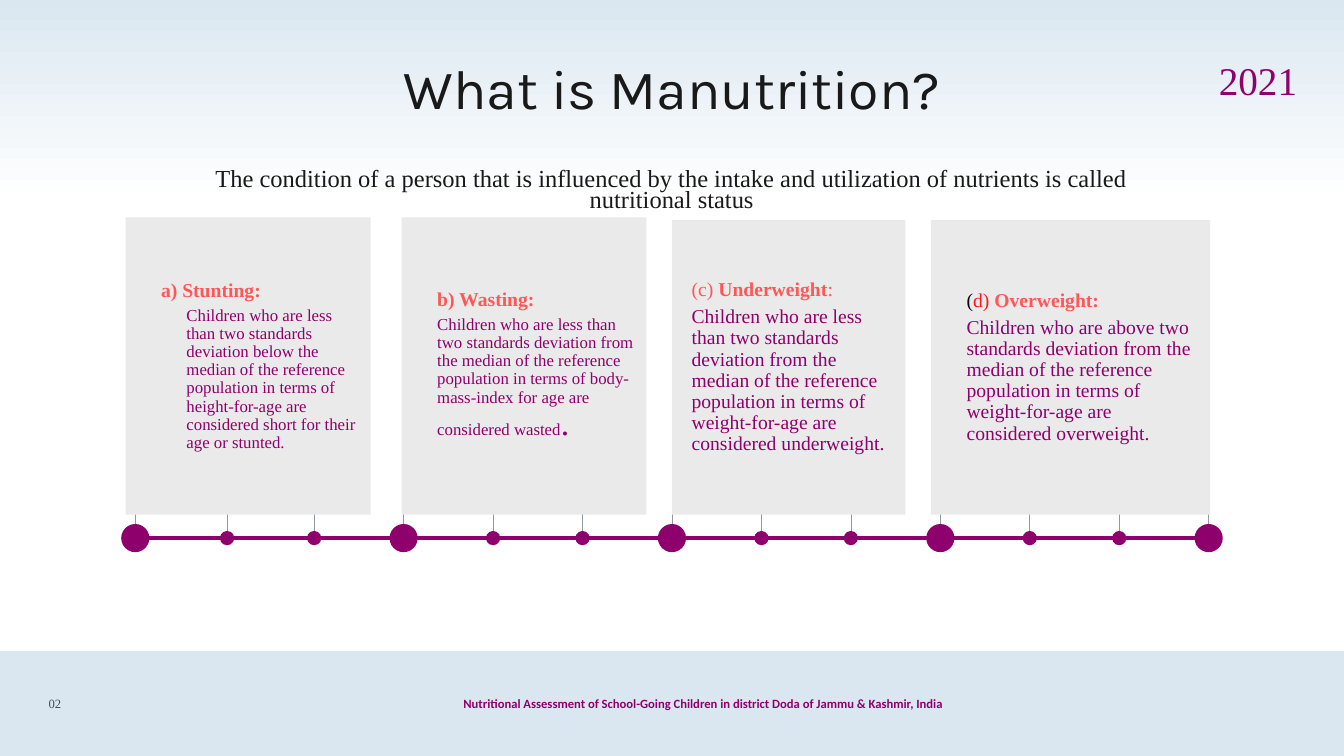
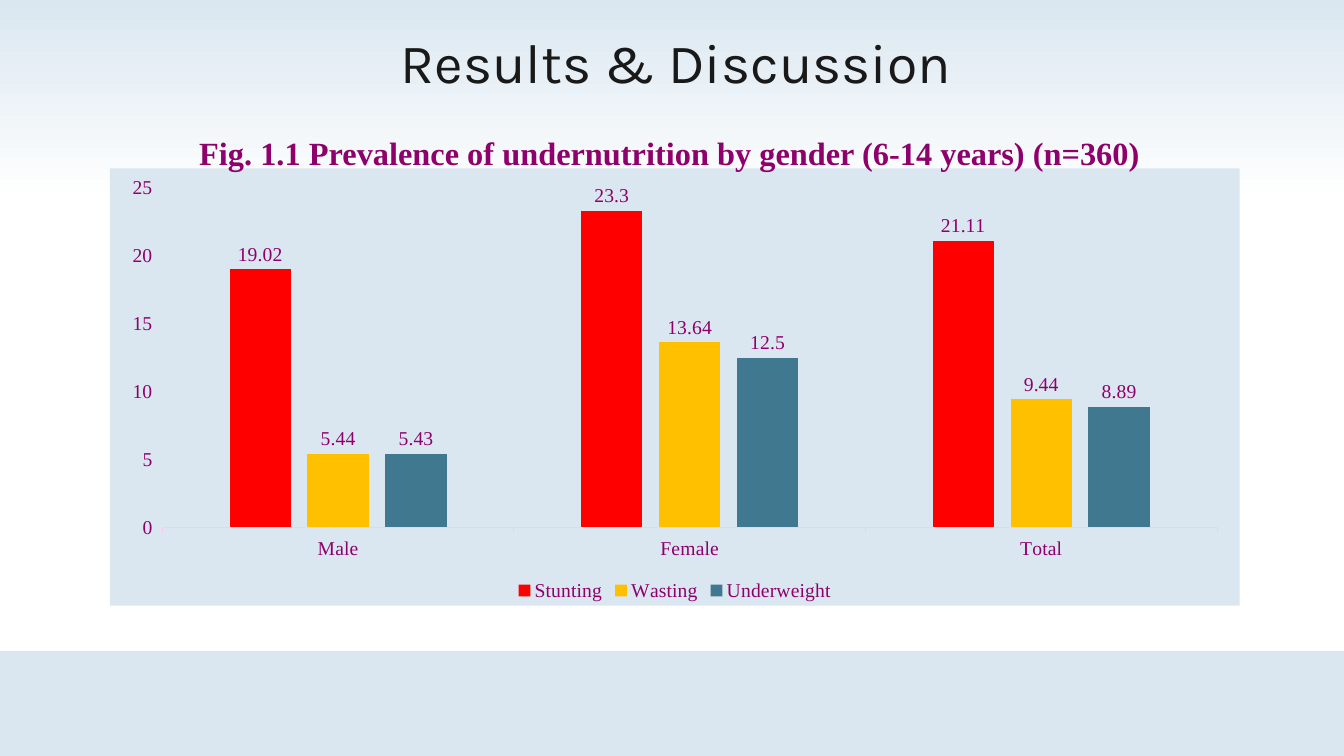
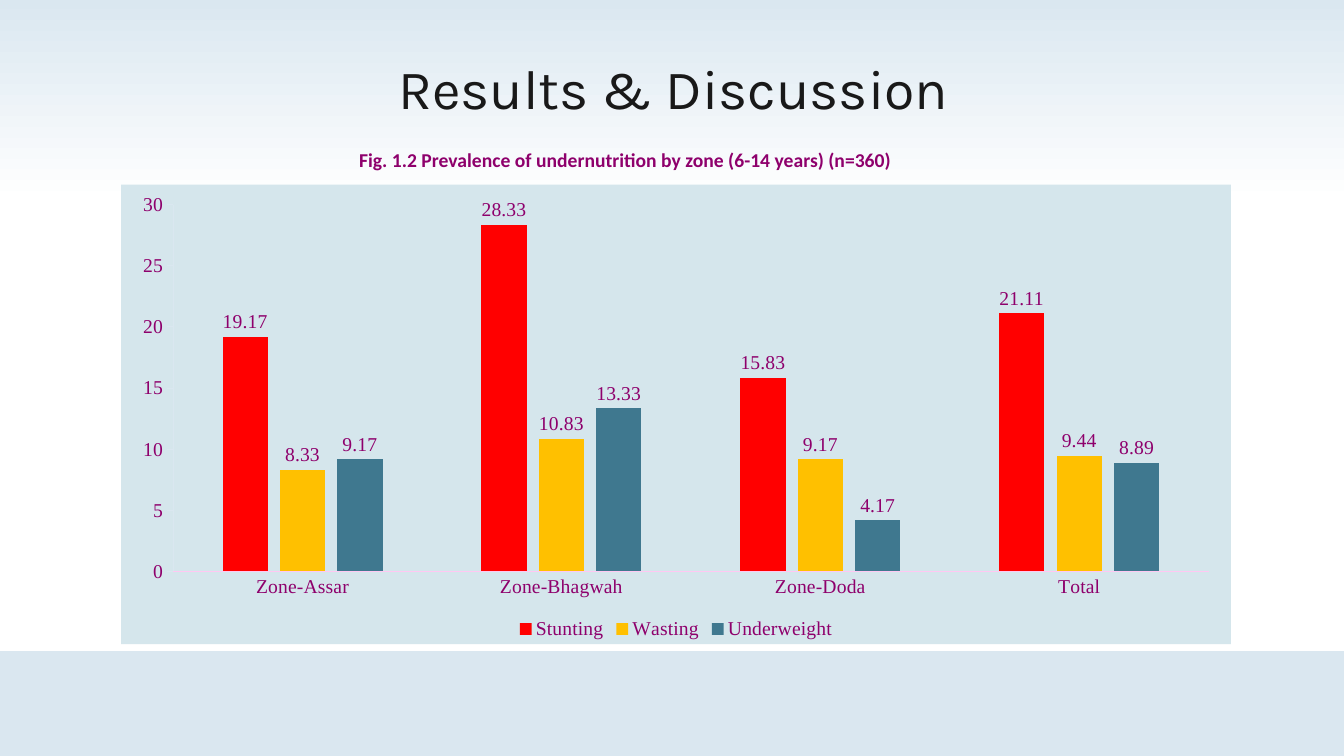
"""Build three slides on child undernutrition: definitions and two result charts."""
from dataclasses import dataclass

from lxml import etree
from pptx import Presentation
from pptx.chart import data as chart_data
from pptx.dml.color import RGBColor
from pptx.enum import chart as chart_enum, shapes, text
from pptx.oxml import ns
from pptx.util import Cm, Pt


@dataclass(frozen=True)
class Theme:
    serif: str = "Times New Roman"
    sans: str = "Calibri"
    display: str = "Karla"
    plum: str = "8E006C"
    coral: str = "FF5757"
    scarlet: str = "FF1616"
    ink: str = "191919"
    black: str = "000000"
    white: str = "FFFFFF"
    slate: str = "454D55"
    grey: str = "9399A1"
    card: str = "EAEAEA"
    mist: str = "DAE7F0"
    pale_teal: str = "D5E6EC"
    pink: str = "FFC8F2"
    bars: tuple = ("FF0000", "FFC000", "3F788F")
    title_size: float = 39.6
    year_size: float = 28
    full_stop_size: float = 24
    caption_size: float = 23.1
    subtitle_size: float = 17.5
    body_size: float = 14
    small_size: float = 12
    footer_size: float = 9


T = Theme()
CENTER, RIGHT = text.PP_ALIGN.CENTER, text.PP_ALIGN.RIGHT
MIDDLE, TOP = text.MSO_ANCHOR.MIDDLE, text.MSO_ANCHOR.TOP
NO_TICK, TICK = chart_enum.XL_TICK_MARK.NONE, chart_enum.XL_TICK_MARK.OUTSIDE
SLIDE_W, SLIDE_H = 33.87, 19.05
TITLE_W, TITLE_H = 25.4, 1.9
CARD_INSETS = (0.5, 0.13, 0.25, 0.13)

SUBTITLE = ("The condition of a person that is influenced by the intake and "
            "utilization of nutrients is called nutritional status")
FOOTER = ("Nutritional Assessment of School-Going Children in district Doda "
          "of Jammu & Kashmir, India")

CARDS = [
    dict(box=(3.17, 5.48, 6.17, 7.49), margin=1.03, hang=-0.64, size=T.small_size,
         heading=[("a) Stunting:", dict(bold=True))],
         body=[("Children who are less than two standards deviation below the median of "
                "the reference population in terms of height-for-age are considered "
                "short for their age or stunted.", {})]),
    dict(box=(10.12, 5.48, 6.17, 7.49), margin=0.4, hang=0, size=T.small_size,
         heading=[("b) Wasting:", dict(bold=True))],
         body=[("Children who are less than two standards deviation from the median of "
                "the reference population in terms of body-mass-index for age are "
                "considered wasted", {}),
               (".", dict(size=T.full_stop_size))]),
    dict(box=(16.93, 5.55, 5.89, 7.42), margin=0, hang=0, size=T.body_size,
         heading=[("(c) ", {}), ("Underweight", dict(bold=True)), (":", {})],
         body=[("Children who are less than two standards deviation from the median of "
                "the reference population in terms of weight-for-age are considered "
                "underweight.", {})]),
    dict(box=(23.46, 5.55, 7.04, 7.42), margin=0.4, hang=0, size=T.body_size,
         heading=[("(", dict(color=T.black)), ("d) ", dict(color=T.scarlet)),
                  ("Overweight:", dict(bold=True))],
         body=[("Children who are above two standards deviation from the median of "
                "the reference population in terms of weight-for-age are considered "
                "overweight.", {})]),
]

TIMELINE = dict(left=3.41, right=30.46, y=13.56, intervals=4, parts=3, nudges={1: 0.06},
                major=dict(dot=0.71, top=9.96), minor=dict(dot=0.36, top=12.34))

RESULTS = [
    dict(title_at=(4.34, 0.76), box=(2.77, 4.24, 28.47, 11.02),
         fill=T.mist, group_tick=TICK, top=25,
         groups=["Male", "Female", "Total"],
         series={"Stunting": (19.02, 23.3, 21.11),
                 "Wasting": (5.44, 13.64, 9.44),
                 "Underweight": (5.43, 12.5, 8.89)},
         caption="Fig. 1.1 Prevalence of undernutrition by gender (6-14 years) (n=360)",
         caption_box=(4.77, 3.23, 25.4, 1.17), anchor=TOP,
         style=dict(size=T.caption_size, font=T.serif)),
    dict(title_at=(4.27, 1.42), box=(3.05, 4.65, 27.97, 11.58),
         fill=T.pale_teal, group_tick=NO_TICK, top=30,
         groups=["Zone-Assar", "Zone-Bhagwah", "Zone-Doda", "Total"],
         series={"Stunting": (19.17, 28.33, 15.83, 21.11),
                 "Wasting": (8.33, 10.83, 9.17, 9.44),
                 "Underweight": (9.17, 13.33, 4.17, 8.89)},
         caption="Fig. 1.2 Prevalence of undernutrition by zone (6-14 years) (n=360)",
         caption_box=(6.12, 3.6, 19.28, 0.86), anchor=MIDDLE,
         style=dict(size=T.body_size, font=T.sans, align=CENTER)),
]


def rgb(color):
    return RGBColor.from_string(color)


def lengths(values):
    return [Cm(value) for value in values]


def set_font(font, size=None, name=None, color=None, bold=None):
    if size:
        font.size = Pt(size)
    if name:
        font.name = name
    if color:
        font.color.rgb = rgb(color)
    if bold is not None:
        font.bold = bold


def write(paragraph, runs, size, color, font=T.serif, bold=False, align=None,
          spacing=None, before=None, margin=0, hang=0):
    set_font(paragraph.font, size, font, color, bold)
    if align is not None:
        paragraph.alignment = align
    if spacing:
        paragraph.line_spacing = spacing
    if before is not None:
        paragraph.space_before = Pt(before)
    if margin:
        properties = paragraph._p.get_or_add_pPr()
        properties.set("marL", str(Cm(margin)))
        properties.set("indent", str(Cm(hang)))
    for words, changes in runs:
        run = paragraph.add_run()
        run.text = words
        set_font(run.font, **changes)


def prepare_frame(frame, anchor, insets=(0.25, 0.13, 0.25, 0.13)):
    frame.word_wrap = True
    frame.auto_size = text.MSO_AUTO_SIZE.NONE
    frame.vertical_anchor = anchor
    (frame.margin_left, frame.margin_top,
     frame.margin_right, frame.margin_bottom) = lengths(insets)


def add_label(slide, box, words, anchor=MIDDLE, insets=(0.25, 0.13, 0.25, 0.13), **style):
    frame = slide.shapes.add_textbox(*lengths(box)).text_frame
    prepare_frame(frame, anchor, insets)
    write(frame.paragraphs[0], [(words, {})], **style)


def add_block(slide, kind, box, color):
    block = slide.shapes.add_shape(kind, *lengths(box))
    block.shadow.inherit = False
    block.fill.solid()
    block.fill.fore_color.rgb = rgb(color)
    block.line.fill.background()
    return block


def add_line(slide, start, end, color, width):
    line = slide.shapes.add_connector(shapes.MSO_CONNECTOR.STRAIGHT, *lengths(start + end))
    line.line.color.rgb = rgb(color)
    line.line.width = Pt(width)
    etree.SubElement(line.element.spPr, ns.qn("a:effectLst"))


def add_titled_slide(deck, layout, title, at):
    slide = deck.slides.add_slide(layout)
    heading = slide.shapes.title
    heading.left, heading.top, heading.width, heading.height = lengths(
        at + (TITLE_W, TITLE_H))
    prepare_frame(heading.text_frame, TOP)
    write(heading.text_frame.paragraphs[0], [(title, {})], T.title_size, T.ink,
          font=T.display, align=CENTER, spacing=0.9)
    return slide


def add_bands(slide):
    rectangle = shapes.MSO_SHAPE.RECTANGLE
    add_block(slide, rectangle, (0, 16.41, SLIDE_W, 2.64), T.mist)
    header_band = add_block(slide, rectangle, (0, -0.03, SLIDE_W, 5.11), T.mist)
    header_band.fill.gradient()
    header_band.fill.gradient_angle = 270
    for stop, color in zip(header_band.fill.gradient_stops, (T.mist, T.white)):
        stop.color.rgb = rgb(color)


def add_timeline(slide):
    left, right, y = TIMELINE["left"], TIMELINE["right"], TIMELINE["y"]
    add_line(slide, (left, y), (right, y), T.plum, 2.84)
    count = TIMELINE["intervals"] * TIMELINE["parts"]
    for index in range(count + 1):
        mark = TIMELINE["minor" if index % TIMELINE["parts"] else "major"]
        x = left + index * (right - left) / count + TIMELINE["nudges"].get(index, 0)
        dot = mark["dot"]
        add_line(slide, (x, y), (x, mark["top"]), T.grey, 0.5)
        add_block(slide, shapes.MSO_SHAPE.OVAL,
                  (x - dot / 2, y - dot / 2, dot, dot), T.plum)


def share_background(slide, layout):
    add_bands(slide)
    add_timeline(slide)
    backdrop = [part for part in slide.shapes if not part.is_placeholder]
    for index, part in enumerate(backdrop):
        part.element.xpath(".//p:cNvPr")[0].set("id", str(100 + index))
        layout.shapes.element.insert(2 + index, part.element)


def add_card(slide, card):
    frame = add_block(slide, shapes.MSO_SHAPE.RECTANGLE, card["box"], T.card).text_frame
    prepare_frame(frame, MIDDLE, CARD_INSETS)
    shared = dict(align=text.PP_ALIGN.LEFT, spacing=0.9, before=4, margin=card["margin"])
    write(frame.paragraphs[0], card["heading"], T.body_size, T.coral,
          hang=card["hang"], **shared)
    write(frame.add_paragraph(), card["body"], card["size"], T.plum, **shared)


def fill_chart(chart, color):
    area = etree.Element(ns.qn("c:spPr"))
    solid = etree.SubElement(area, ns.qn("a:solidFill"))
    etree.SubElement(solid, ns.qn("a:srgbClr"), val=color)
    border = etree.SubElement(area, ns.qn("a:ln"))
    etree.SubElement(border, ns.qn("a:noFill"))
    chart.element.find(ns.qn("c:chart")).addnext(area)


def add_prevalence_chart(slide, result):
    prevalence = chart_data.CategoryChartData()
    prevalence.categories = result["groups"]
    for name, values in result["series"].items():
        prevalence.add_series(name, values)
    chart = slide.shapes.add_chart(chart_enum.XL_CHART_TYPE.COLUMN_CLUSTERED,
                                   *lengths(result["box"]), prevalence).chart
    set_font(chart.font, T.body_size, T.serif, T.plum)
    fill_chart(chart, result["fill"])
    chart.has_title = False
    chart.has_legend = True
    chart.legend.position = chart_enum.XL_LEGEND_POSITION.BOTTOM
    chart.legend.include_in_layout = False

    percent = chart.value_axis
    for axis, tick, color in ((chart.category_axis, result["group_tick"], T.pink),
                              (percent, TICK, T.mist)):
        axis.has_major_gridlines = False
        axis.major_tick_mark = tick
        axis.format.line.color.rgb = rgb(color)
        axis.format.line.width = Pt(0.75)
    percent.minimum_scale, percent.maximum_scale = 0, result["top"]
    percent.major_unit = 5

    plot = chart.plots[0]
    plot.vary_by_categories = False
    plot.gap_width, plot.overlap = 219, -27
    plot.has_data_labels = True
    plot.data_labels.show_value = True
    plot.data_labels.position = chart_enum.XL_LABEL_POSITION.OUTSIDE_END
    for bars, color in zip(plot.series, T.bars):
        bars.invert_if_negative = False
        bars.format.fill.solid()
        bars.format.fill.fore_color.rgb = rgb(color)


def add_definitions(deck, layout):
    slide = add_titled_slide(deck, layout, "What is Manutrition?", (4.24, 1.42))
    share_background(slide, layout)
    add_label(slide, (30.02, 1.32, 2.67, 1.52), "2021", insets=(0, 0, 0, 0),
              size=T.year_size, color=T.plum, align=RIGHT, spacing=0.9)
    for card in CARDS:
        add_card(slide, card)
    add_label(slide, (8.95, 17.22, 17.53, 1.02), FOOTER, size=T.footer_size,
              color=T.plum, font=T.sans, bold=True, align=CENTER)
    add_label(slide, (0.79, 17.22, 1.19, 1.02), "02", size=T.footer_size,
              color=T.slate, align=CENTER)
    add_label(slide, (4.23, 4.19, 25.4, 1.37), SUBTITLE, anchor=TOP,
              size=T.subtitle_size, color=T.ink, align=CENTER, spacing=0.7)


def add_result(deck, layout, result):
    slide = add_titled_slide(deck, layout, "Results & Discussion", result["title_at"])
    add_prevalence_chart(slide, result)
    add_label(slide, result["caption_box"], result["caption"], anchor=result["anchor"],
              color=T.plum, bold=True, **result["style"])


def main():
    deck = Presentation()
    deck.slide_width, deck.slide_height = lengths((SLIDE_W, SLIDE_H))
    layout = deck.slide_layouts[5]
    add_definitions(deck, layout)
    for result in RESULTS:
        add_result(deck, layout, result)
    deck.save("out.pptx")


if __name__ == "__main__":
    main()
